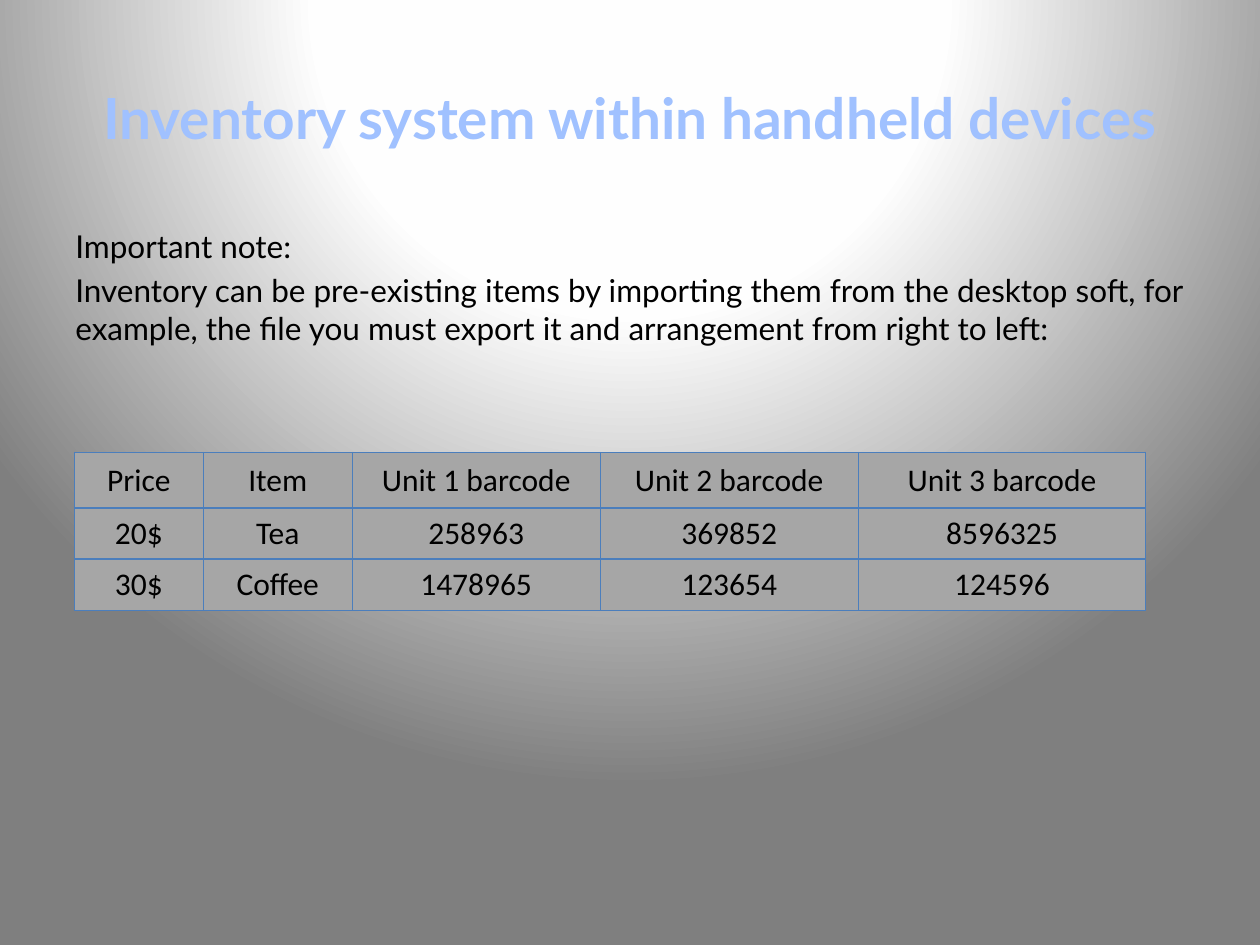
import pptx
import pptx.dml.color
import pptx.enum.text
import pptx.oxml
import pptx.oxml.ns
import pptx.util

Cm, Pt = pptx.util.Cm, pptx.util.Pt
ALIGN = pptx.enum.text.PP_ALIGN
ANCHOR = pptx.enum.text.MSO_ANCHOR
qn = pptx.oxml.ns.qn
DRAWING = pptx.oxml.ns.nsdecls("a")


def rgb(hex_color):
    return pptx.dml.color.RGBColor.from_string(hex_color)


class InventorySlide:
    """Holds the style and the current slide."""

    text_font = "Lato"
    table_font = "Calibri"
    text_color = "000000"
    title_color = "A0C1FF"
    cell_fill = "A6A6A6"
    border_color = "4B7EBC"
    text_size = 18

    def __init__(self, slide):
        self.slide = slide

    def background(self, stops):
        """Fill with a circular gradient centred above the slide."""
        self.slide.background.fill.solid()
        properties = self.slide.element.find(".//" + qn("p:bgPr"))
        stop_xml = "".join(
            f'<a:gs pos="{percent * 1000}"><a:srgbClr val="{color}"/></a:gs>'
            for percent, color in stops)
        gradient = pptx.oxml.parse_xml(
            f'<a:gradFill {DRAWING} rotWithShape="1"><a:gsLst>{stop_xml}</a:gsLst>'
            '<a:path path="circle">'
            '<a:fillToRect l="50000" t="-80000" r="50000" b="180000"/>'
            '</a:path></a:gradFill>')
        properties.replace(properties[0], gradient)

    def run(self, paragraph, words, font, size, color, bold=False):
        run = paragraph.add_run()
        run.text = words
        run.font.name = font
        run.font.size = Pt(size)
        run.font.bold = bold
        run.font.color.rgb = rgb(color)

    def text_frame(self, left, top, width, height, anchor):
        box = self.slide.shapes.add_textbox(Cm(left), Cm(top), Cm(width), Cm(height))
        frame = box.text_frame
        frame.word_wrap = True
        frame.vertical_anchor = anchor
        return frame

    def title(self, words, *place):
        heading = self.text_frame(*place, ANCHOR.MIDDLE).paragraphs[0]
        heading.alignment = ALIGN.CENTER
        self.run(heading, words, self.text_font, 32.4, self.title_color, bold=True)

    def note(self, lines, *place):
        frame = self.text_frame(*place, ANCHOR.TOP)
        for index, line in enumerate(lines):
            paragraph = frame.add_paragraph() if index else frame.paragraphs[0]
            paragraph.space_before = Pt(0.2 * self.text_size)
            self.run(paragraph, line, self.text_font, self.text_size, self.text_color)

    def border(self, cell):
        properties = cell._tc.get_or_add_tcPr()
        for position, side in enumerate(("lnL", "lnR", "lnT", "lnB")):
            properties.insert(position, pptx.oxml.parse_xml(
                f'<a:{side} {DRAWING} w="{Pt(0.75)}"><a:solidFill>'
                f'<a:srgbClr val="{self.border_color}"/></a:solidFill></a:{side}>'))

    def table(self, rows, left, top, widths, heights):
        table = self.slide.shapes.add_table(
            len(rows), len(widths), Cm(left), Cm(top),
            Cm(sum(widths)), Cm(sum(heights))).table
        for column, width in zip(table.columns, widths):
            column.width = Cm(width)
        for table_row, height, values in zip(table.rows, heights, rows):
            table_row.height = Cm(height)
            for cell, value in zip(table_row.cells, values):
                cell.fill.solid()
                cell.fill.fore_color.rgb = rgb(self.cell_fill)
                cell.vertical_anchor = ANCHOR.MIDDLE
                self.border(cell)
                paragraph = cell.text_frame.paragraphs[0]
                paragraph.alignment = ALIGN.CENTER
                self.run(paragraph, value, self.table_font, self.text_size,
                         self.text_color)


def main():
    deck = pptx.Presentation()
    deck.slide_width, deck.slide_height = Cm(25.4), Cm(19.05)
    page = InventorySlide(deck.slides.add_slide(deck.slide_layouts[6]))

    page.background([(0, "FFFFFF"), (40, "FEFEFE"), (100, "7F7F7F")])
    page.title("Inventory system within handheld devices", 1.27, 0.76, 22.86, 3.18)
    page.note([
        "Important note:",
        "Inventory can be pre-existing items by importing them from the desktop soft, "
        "for example, the file you must export it and arrangement from right to left:",
    ], 1.27, 4.45, 22.86, 12.57)
    page.table([
        ("Price", "Item", "Unit 1 barcode", "Unit 2 barcode", "Unit 3 barcode"),
        ("20$", "Tea", "258963", "369852", "8596325"),
        ("30$", "Coffee", "1478965", "123654", "124596"),
    ], 1.5, 9.12, widths=(2.6, 3, 5, 5.2, 5.8), heights=(1.12, 1.03, 1.03))

    deck.save("out.pptx")


if __name__ == "__main__":
    main()
